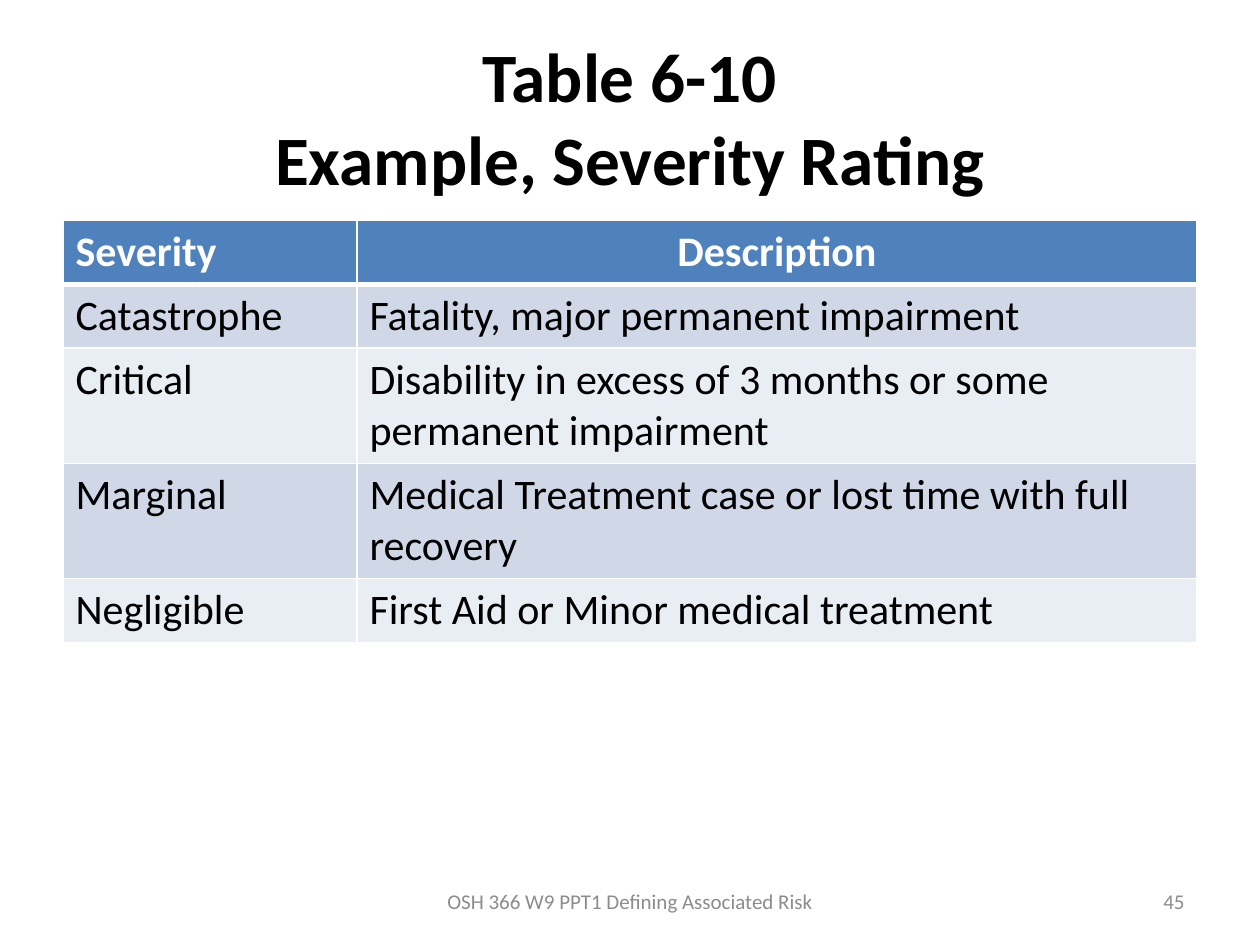
"""Build the severity rating table slide."""
from dataclasses import dataclass

from lxml.etree import fromstring
from pptx import Presentation
from pptx.dml.color import RGBColor
from pptx.enum.text import MSO_ANCHOR, PP_ALIGN
from pptx.oxml.ns import nsdecls
from pptx.util import Pt


@dataclass(frozen=True)
class Theme:
    """Colours, font and type sizes."""
    font: str = "Calibri"
    text: str = "000000"
    white: str = "FFFFFF"
    muted: str = "8C8C8C"
    header: str = "4F81BD"
    bands: tuple = ("D0D8E8", "E9EDF4")
    title_size: float = 39.6
    table_size: float = 24
    footer_size: float = 12


class SlideBuilder:
    """Hold the theme and the current slide."""

    def __init__(self, slide, theme):
        """Keep the slide and its theme."""
        self.s = slide
        self.theme = theme

    def add_runs(self, p, text, size, color, bold=False, align=PP_ALIGN.LEFT):
        """Add runs to a paragraph, one per line of text."""
        p.alignment = align
        for i, line in enumerate(text.split("\n")):
            if i:
                p.add_line_break()
            r = p.add_run()
            r.text = line
            r.font.name = self.theme.font
            r.font.size = Pt(size)
            r.font.bold = bold
            r.font.color.rgb = RGBColor.from_string(color)

    def text(self, box, text, size, color, bold=False, align=PP_ALIGN.CENTER):
        """Add a vertically centred text box."""
        sp = self.s.shapes.add_textbox(*map(Pt, box))
        tf = sp.text_frame
        tf.word_wrap = True
        tf.vertical_anchor = MSO_ANCHOR.MIDDLE
        self.add_runs(tf.paragraphs[0], text, size, color, bold, align)

    def borders(self, cell, top, bottom):
        """Draw white borders around a cell."""
        tc_pr = cell._tc.get_or_add_tcPr()
        widths = {"L": 1, "R": 1, "T": top, "B": bottom}
        for i, (side, width) in enumerate(widths.items()):
            tc_pr.insert(i, fromstring(
                f'<a:ln{side} {nsdecls("a")} w="{int(Pt(width))}"><a:solidFill>'
                f'<a:srgbClr val="{self.theme.white}"/></a:solidFill></a:ln{side}>'))

    def table(self, left, top, widths, heights, rows):
        """Add a banded table with a header row."""
        t = self.theme
        box = (left, top, sum(widths), sum(heights))
        table = self.s.shapes.add_table(len(rows), len(widths), *map(Pt, box)).table
        for col, width in zip(table.columns, widths):
            col.width = Pt(width)
        for i, (row, height) in enumerate(zip(rows, heights)):
            table.rows[i].height = Pt(height)
            head = i == 0
            for j, text in enumerate(row):
                cell = table.cell(i, j)
                cell.fill.solid()
                cell.fill.fore_color.rgb = RGBColor.from_string(
                    t.header if head else t.bands[(i - 1) % 2])
                self.borders(cell, 3 if i == 1 else 1, 3 if head else 1)
                self.add_runs(cell.text_frame.paragraphs[0], text, t.table_size,
                              t.white if head else t.text, head,
                              PP_ALIGN.CENTER if head and j else PP_ALIGN.LEFT)


def main():
    """Create the slide and save it."""
    prs = Presentation()
    prs.slide_width, prs.slide_height = Pt(720), Pt(540)
    theme = Theme()
    b = SlideBuilder(prs.slides.add_slide(prs.slide_layouts[6]), theme)
    b.text((36, 21.6, 648, 90), "Table 6-10\nExample, Severity Rating",
           theme.title_size, theme.text, bold=True)
    one_line, two_lines = 36.5, 65.8
    b.table(36, 126, (168, 480), (one_line, one_line, two_lines, two_lines, one_line), (
        ("Severity", "Description"),
        ("Catastrophe", "Fatality, major permanent impairment"),
        ("Critical", "Disability in excess of 3 months or some permanent impairment"),
        ("Marginal", "Medical Treatment case or lost time with full recovery"),
        ("Negligible", "First Aid or Minor medical treatment"),
    ))
    b.text((246, 500.4, 228, 28.8), "OSH 366 W9 PPT1 Defining Associated Risk",
           theme.footer_size, theme.muted)
    b.text((516, 500.4, 168, 28.8), "45", theme.footer_size, theme.muted,
           align=PP_ALIGN.RIGHT)
    prs.save("out.pptx")


if __name__ == "__main__":
    main()
